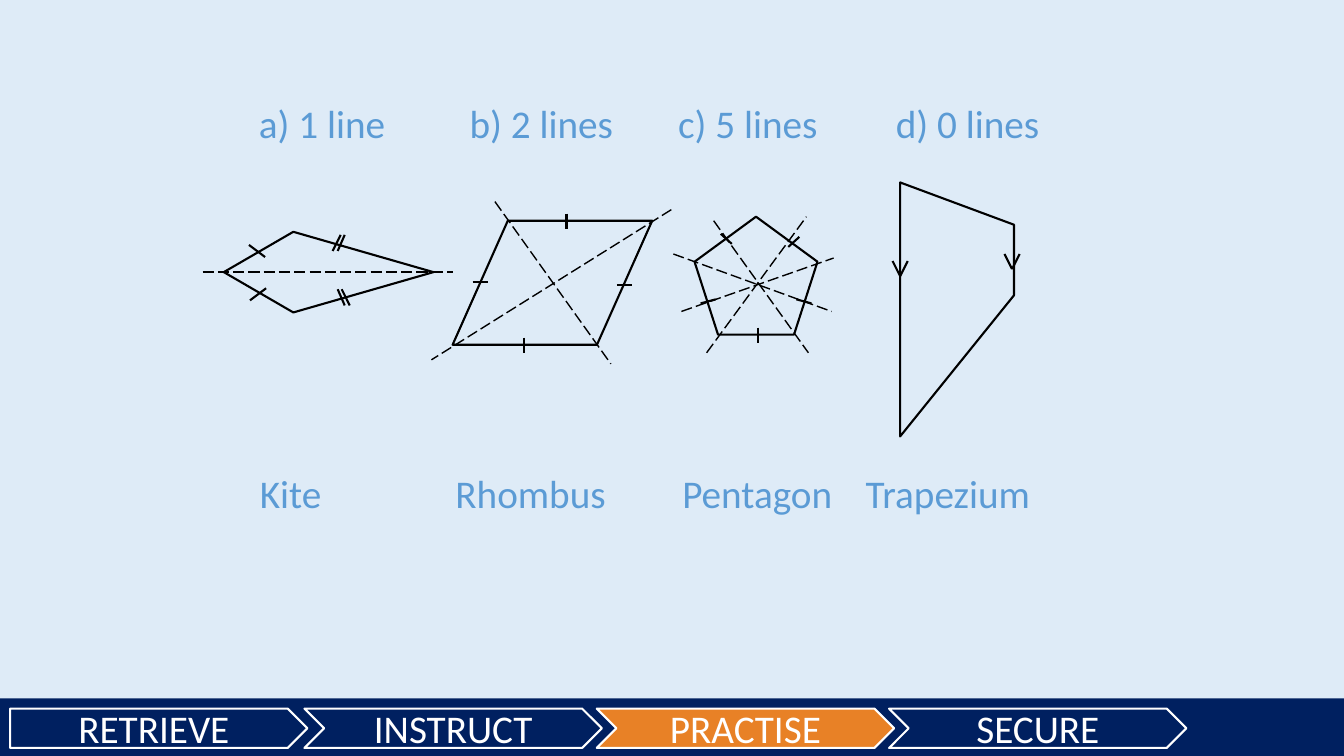
"""Build a slide on lines of symmetry in four shapes, on a grid of tenth-inch cells."""
import dataclasses
import typing

import lxml.etree
import pptx
import pptx.dml.color
import pptx.enum.dml
import pptx.enum.shapes
import pptx.enum.text
import pptx.oxml.ns
import pptx.util

CELL = 0.1
COLS, ROWS = 133.33, 75
FONT, SIZE = "Calibri", 28
PALE, NAVY, AMBER, SKY = "DEEBF7", "002060", "E88126", "5B9BD5"
BLACK, WHITE = "000000", "FFFFFF"
KIND = pptx.enum.shapes.MSO_SHAPE
Point = tuple[float, float]


@dataclasses.dataclass
class Stage:
    name: str
    left: float
    kind: typing.Any = KIND.CHEVRON
    fill: str = NAVY


@dataclasses.dataclass
class Label:
    text: str
    left: float
    top: float
    width: float


@dataclasses.dataclass
class Tick:
    x: float
    y: float
    dx: float
    dy: float


@dataclasses.dataclass
class Figure:
    ticks: list[Tick]
    axes: list[tuple[Point, Point]]
    points: list[Point] = dataclasses.field(default_factory=list)
    kind: typing.Any = None
    box: tuple[float, ...] = ()
    slant: float | None = None


TOP, BASE = 9.4, 46.1
LABELS = [
    Label("a) 1 line", 24.7, TOP, 15.5),
    Label("b) 2 lines", 45.6, TOP, 17.2),
    Label("c) 5 lines", 66.3, TOP, 19),
    Label("d) 0 lines", 87.9, TOP, 17.3),
    Label("Kite", 24.8, BASE, 12.8),
    Label("Rhombus", 44.2, BASE, 17.8),
    Label("Pentagon", 66.7, BASE, 17.8),
    Label("Trapezium", 84.9, BASE, 21.9),
]

FIRST, STRIDE = 30.2, 29
STAGES = [
    Stage("RETRIEVE", 1, KIND.PENTAGON),
    Stage("INSTRUCT", FIRST),
    Stage("PRACTISE", FIRST + STRIDE, fill=AMBER),
    Stage("SECURE", FIRST + 2 * STRIDE),
]

ARM = 0.75
KITE = Figure(
    [Tick(33.85, 29.5, 0.35, 0.8), Tick(34.3, 29.5, 0.4, 0.8),
     Tick(33.4, 24.1, 0.4, -0.8), Tick(33.85, 24.1, 0.35, -0.8),
     Tick(25.5, 24.9, 0.8, 0.6), Tick(25.6, 29.2, -0.8, 0.6)],
    [((20.1, 27), (44.9, 27))],
    points=[(29.1, 23), (43, 27), (29.1, 31), (22.2, 27)],
)
RHOMBUS = Figure(
    [Tick(47.65, 28, ARM, 0), Tick(61.95, 28.3, ARM, 0),
     Tick(56.2, 21.95, 0, ARM), Tick(52, 34.25, 0, ARM)],
    [((49.1, 20), (60.6, 36.1)), ((66.6, 20.8), (42.8, 35.7))],
    kind=KIND.PARALLELOGRAM, box=(44.9, 21.9, 19.8, 12.3), slant=0.445,
)
PENTAGON = Figure(
    [Tick(70.25, 29.9, ARM, -0.2), Tick(79.75, 29.9, ARM, 0.2),
     Tick(72.05, 23.7, 0.55, 0.5), Tick(78.75, 24, 0.55, -0.5),
     Tick(75.2, 33.25, 0, ARM)],
    [((70.8, 21.9), (80.2, 35)), ((66.8, 25.2), (82.5, 30.9)),
     ((70.1, 35), (80, 21.5)), ((67.6, 30.9), (82.7, 25.6))],
    kind=KIND.REGULAR_PENTAGON, box=(68.9, 21.5, 12.2, 11.7),
)
TRAPEZIUM = Figure(
    [Tick(x + side * ARM / 2, y - ARM, side * ARM / 2, -ARM)
     for x, y in ((100.4, 26.7), (89.3, 27.4)) for side in (1, -1)],
    [],
    points=[(100.6, 22.3), (100.6, 29.3), (89.3, 43.3), (89.3, 18.1)],
)
FIGURES = [KITE, RHOMBUS, PENTAGON, TRAPEZIUM]


def grid(cells: float) -> int:
    """Turn a count of grid cells into a length."""
    return pptx.util.Inches(cells * CELL)


def color(code: str) -> pptx.dml.color.RGBColor:
    """Turn a hex string into a colour."""
    return pptx.dml.color.RGBColor.from_string(code)


def paint(shape: typing.Any, fill: str, line: str | None) -> None:
    """Give a shape a flat fill and an outline, if any."""
    shape.shadow.inherit = False
    shape.fill.solid()
    shape.fill.fore_color.rgb = color(fill)
    if line is None:
        shape.line.fill.background()
    else:
        shape.line.color.rgb = color(line)
        shape.line.width = pptx.util.Pt(1.5)


def write(frame: typing.Any, text: str, code: str) -> typing.Any:
    """Add one run of text and return its paragraph."""
    para = frame.paragraphs[0]
    run = para.add_run()
    run.text = text
    run.font.name = FONT
    run.font.size = pptx.util.Pt(SIZE)
    run.font.color.rgb = color(code)
    return para


def block(shapes: typing.Any, kind: typing.Any, box: tuple[float, ...],
          fill: str, line: str | None) -> typing.Any:
    """Draw a preset shape in a box of grid cells."""
    shape = shapes.add_shape(kind, *map(grid, box))
    paint(shape, fill, line)
    return shape


def stroke(shapes: typing.Any, start: Point, end: Point, dashed: bool = False) -> None:
    """Draw a black line, solid or dashed."""
    line = shapes.add_connector(pptx.enum.shapes.MSO_CONNECTOR.STRAIGHT,
                                *map(grid, start + end))
    line.line.color.rgb = color(BLACK)
    line.line.width = pptx.util.Pt(1 if dashed else 1.5)
    if dashed:
        line.line.dash_style = pptx.enum.dml.MSO_LINE.LONG_DASH
    lxml.etree.SubElement(line._element.spPr, pptx.oxml.ns.qn("a:effectLst"))


def draw_stage(shapes: typing.Any, stage: Stage) -> None:
    """Draw one step of the bottom bar."""
    shape = block(shapes, stage.kind, (stage.left, 70.3, 29.5, 3.9), stage.fill, WHITE)
    frame = shape.text_frame
    frame.vertical_anchor = pptx.enum.text.MSO_ANCHOR.MIDDLE
    write(frame, stage.name, WHITE).alignment = pptx.enum.text.PP_ALIGN.CENTER


def draw_figure(shapes: typing.Any, figure: Figure) -> None:
    """Draw an outline, its marks and its lines of symmetry."""
    if figure.points:
        first, *rest = [(grid(x), grid(y)) for x, y in figure.points]
        form = shapes.build_freeform(*first)
        form.add_line_segments(rest, close=True)
        paint(form.convert_to_shape(), PALE, BLACK)
    else:
        shape = block(shapes, figure.kind, figure.box, PALE, BLACK)
        if figure.slant is not None:
            shape.adjustments[0] = figure.slant
    for tick in figure.ticks:
        stroke(shapes, (tick.x - tick.dx, tick.y - tick.dy),
               (tick.x + tick.dx, tick.y + tick.dy))
    for start, end in figure.axes:
        stroke(shapes, start, end, dashed=True)


def draw_label(shapes: typing.Any, label: Label) -> None:
    """Draw one caption."""
    box = shapes.add_textbox(*map(grid, (label.left, label.top, label.width, 5.7)))
    frame = box.text_frame
    frame.word_wrap = True
    frame.auto_size = pptx.enum.text.MSO_AUTO_SIZE.SHAPE_TO_FIT_TEXT
    write(frame, label.text, SKY)


def main() -> None:
    """Build and save the slide."""
    deck = pptx.Presentation()
    deck.slide_width, deck.slide_height = grid(COLS), grid(ROWS)
    slide = deck.slides.add_slide(deck.slide_layouts[6])
    slide.background.fill.solid()
    slide.background.fill.fore_color.rgb = color(PALE)
    shapes = slide.shapes
    block(shapes, KIND.RECTANGLE, (0, 69.3, COLS, 5.7), NAVY, None)
    for stage in STAGES:
        draw_stage(shapes, stage)
    for figure in FIGURES:
        draw_figure(shapes, figure)
    for label in LABELS:
        draw_label(shapes, label)
    deck.save("out.pptx")


if __name__ == "__main__":
    main()
